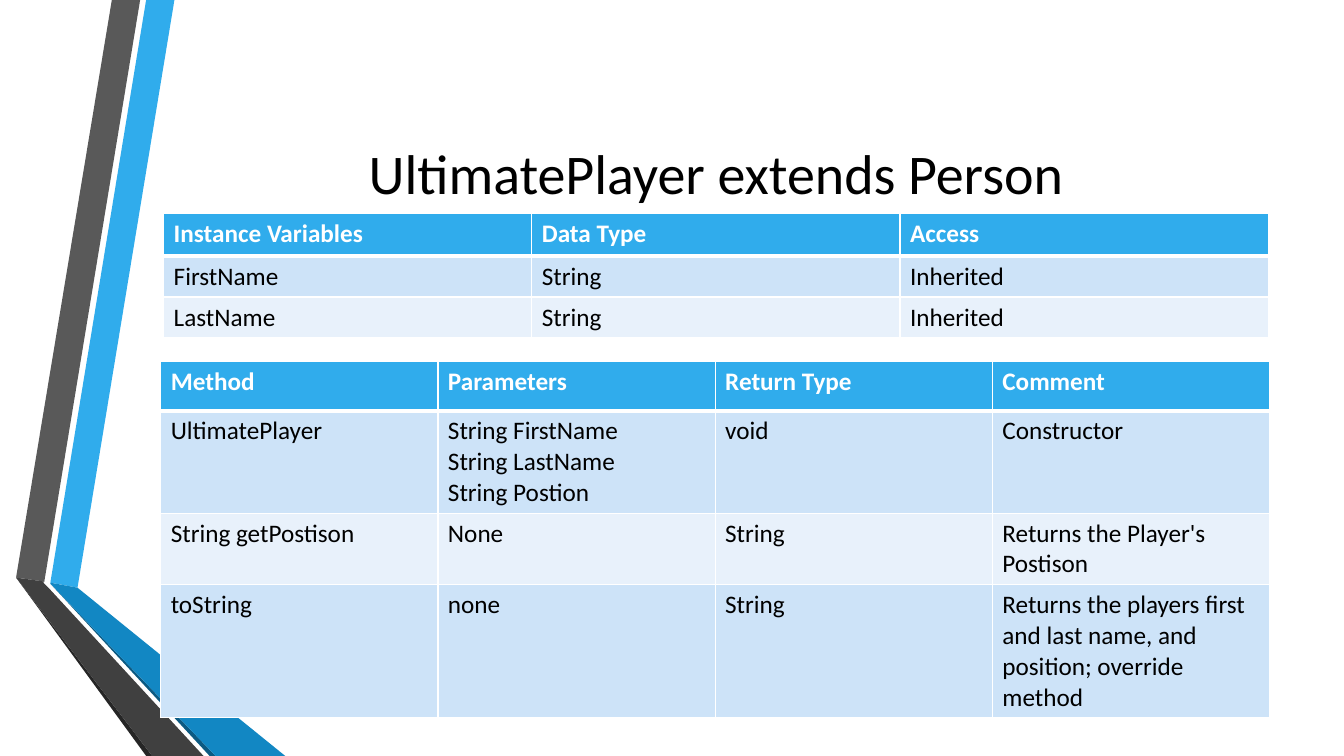
"""Build the UltimatePlayer class slide with its two member tables."""
import pptx
import pptx.dml.color
import pptx.enum.text
import pptx.oxml
import pptx.oxml.ns
import pptx.util

Pt = pptx.util.Pt
RGBColor = pptx.dml.color.RGBColor

TITLE = "UltimatePlayer\u00a0extends Person"
VARIABLES = [
    ("Instance Variables", "Data Type", "Access"),
    ("FirstName", "String", "Inherited"),
    ("LastName", "String", "Inherited"),
]
METHODS = [
    ("Method", "Parameters", "Return Type", "Comment"),
    ("UltimatePlayer", "String FirstName\nString LastName\nString Postion", "void", "Constructor"),
    ("String getPostison", "None", "String", "Returns the Player's Postison"),
    ("toString", "none", "String",
     "Returns the players first and last name, and position; override method"),
]

FONT = "Calibri"
BLACK = RGBColor(0x00, 0x00, 0x00)
WHITE = RGBColor(0xFF, 0xFF, 0xFF)
BLUE = RGBColor(0x30, 0xAC, 0xEC)
MID_BLUE = RGBColor(0x12, 0x87, 0xC3)
DEEP_BLUE = RGBColor(0x0C, 0x5A, 0x82)
GRAY = RGBColor(0x59, 0x59, 0x59)
DARK_GRAY = RGBColor(0x40, 0x40, 0x40)
DEEP_GRAY = RGBColor(0x26, 0x26, 0x26)
BAND_DARK = RGBColor(0xCD, 0xE3, 0xF8)
BAND_LIGHT = RGBColor(0xE8, 0xF1, 0xFB)

RIBBONS = [
    (BLUE, [(36, 416.2), (55.4, 419.8), (124.6, 0), (104.4, 0)]),
    (GRAY, [(100.1, 0), (79.9, 0), (11.5, 412.6), (31.7, 415.4)]),
    (DEEP_GRAY, [(11.5, 412.6), (104.4, 540), (108.7, 540)]),
    (DEEP_BLUE, [(36, 416.9), (149.8, 540), (154.1, 540)]),
    (MID_BLUE, [(36, 416.9), (154.1, 540), (203.8, 540), (55.4, 419.8), (36, 416.2)]),
    (DARK_GRAY, [(145.4, 540), (34.6, 419.8), (31, 416.2), (31.7, 415.4),
                 (11.5, 412.6), (108.7, 540)]),
]


def add_ribbon(page, color, points):
    """Draw one flat polygon of the side ribbon."""
    builder = page.shapes.build_freeform(Pt(points[0][0]), Pt(points[0][1]))
    builder.add_line_segments([(Pt(x), Pt(y)) for x, y in points[1:]], close=True)
    ribbon = builder.convert_to_shape()
    ribbon.shadow.inherit = False
    ribbon.fill.solid()
    ribbon.fill.fore_color.rgb = color
    ribbon.line.fill.background()


def format_text(frame, size, color, bold=False):
    """Apply the slide font to every run in a text frame."""
    for para in frame.paragraphs:
        for span in para.runs:
            span.font.name = FONT
            span.font.size = Pt(size)
            span.font.bold = bold
            span.font.color.rgb = color


def set_borders(cell, widths):
    """Give a cell white borders, one width in points per side."""
    properties = cell._tc.get_or_add_tcPr()
    for index, (side, width) in enumerate(widths.items()):
        properties.insert(index, pptx.oxml.parse_xml(
            f'<a:ln{side} {pptx.oxml.ns.nsdecls("a")} w="{Pt(width)}">'
            f'<a:solidFill><a:srgbClr val="{WHITE}"/></a:solidFill></a:ln{side}>'))


def add_grid(page, rows, left, top, width, height, row_heights):
    """Add a table with a header row and alternating bands."""
    holder = page.shapes.add_table(len(rows), len(rows[0]), Pt(left), Pt(top), Pt(width), Pt(height))
    table = holder.table
    for row, row_height in zip(table.rows, row_heights):
        row.height = Pt(row_height)
    for r, values in enumerate(rows):
        header = r == 0
        band = BLUE if header else BAND_DARK if r % 2 else BAND_LIGHT
        for c, value in enumerate(values):
            cell = table.cell(r, c)
            cell.text_frame.text = value
            format_text(cell.text_frame, 18, WHITE if header else BLACK, header)
            cell.fill.solid()
            cell.fill.fore_color.rgb = band
            set_borders(cell, {"L": 1, "R": 1, "T": 3 if r == 1 else 1, "B": 3 if header else 1})
    holder.height = Pt(height)


def main():
    """Assemble and save the slide."""
    deck = pptx.Presentation()
    deck.slide_width, deck.slide_height = Pt(960), Pt(540)
    page = deck.slides.add_slide(deck.slide_layouts[5])
    for color, points in RIBBONS:
        add_ribbon(page, color, points)

    title = page.shapes.title
    title.left, title.top, title.width, title.height = Pt(116.9), Pt(54), Pt(789), Pt(138)
    title.text_frame.text = TITLE
    title.text_frame.vertical_anchor = pptx.enum.text.MSO_ANCHOR.MIDDLE
    title.text_frame.paragraphs[0].alignment = pptx.enum.text.PP_ALIGN.CENTER
    format_text(title.text_frame, 40, BLACK)

    add_grid(page, VARIABLES, 116.9, 152.2, 789, 89.3, [30.7, 29.3, 29.3])
    add_grid(page, METHODS, 114.8, 258.1, 792, 251.3, [35.3, 35.3, 34.6, 34.6])
    deck.save("out.pptx")


if __name__ == "__main__":
    main()
